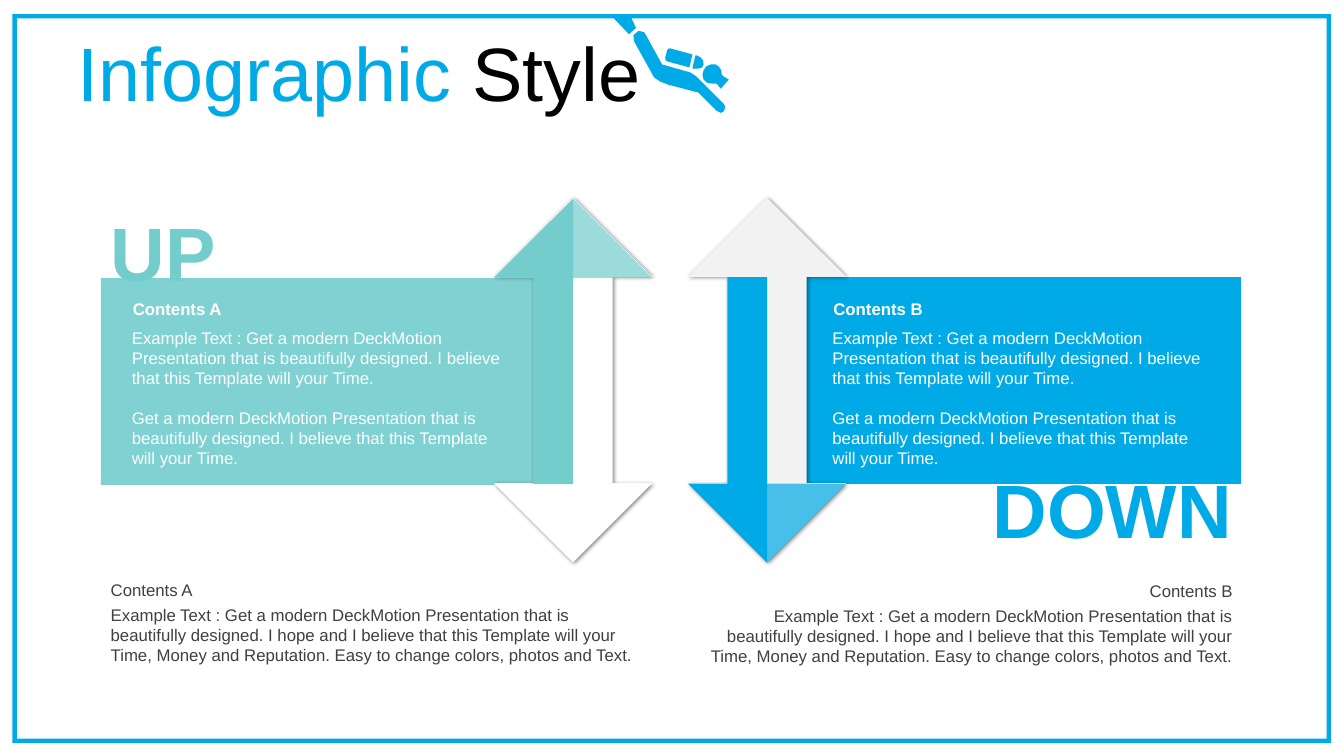
from lxml.etree import SubElement
from pptx import Presentation
from pptx.dml.color import RGBColor
from pptx.enum.shapes import MSO_SHAPE
from pptx.enum.text import MSO_ANCHOR, MSO_AUTO_SIZE, PP_ALIGN
from pptx.oxml.ns import qn
from pptx.util import Pt

BLUE, TEAL, WHITE, PALE, GREY, BLACK = "00AAE6", "73CDCD", "FFFFFF", "F2F2F2", "404040", "000000"
HEAD_HALF, STEM_HALF, HEAD_HEIGHT, FACE_HEIGHT = 56.6, 28.4, 56.6, 204

PANEL_COPY = [
    "Example Text : Get a modern DeckMotion Presentation that is beautifully designed. "
    "I believe that this Template will your Time.",
    "Get a modern DeckMotion Presentation that is beautifully designed. "
    "I believe that this Template will your Time.",
]
FOOTER_COPY = [
    "Example Text : Get a modern DeckMotion Presentation that is beautifully designed. "
    "I hope and I believe that this Template will your Time, Money and Reputation. "
    "Easy to change colors, photos and Text."
]

DIVER_HEAD = [(507.6, 46.1), (511, 46), (513.4, 47.5), (515.2, 50), (515.5, 53.3), (517, 54.7),
              (520.6, 56.9), (514.8, 63.4), (511.9, 59.8), (509.8, 59.8), (505.4, 59.4),
              (502.6, 56.9), (501.8, 53.5), (502.6, 50.4), (504.4, 47.5)]
DIVER_VALVE = [(497.5, 39.6), (500.4, 41), (502.2, 43.2), (502.6, 46.1), (501.5, 48.2),
               (499, 49), (494.6, 49), (495.4, 45.4), (496.8, 39.6)]
DIVER_TANK = [(478.8, 34.6), (494.6, 38.9), (492.5, 48.2), (476.6, 43.9), (475.3, 42.8),
              (475.2, 41), (476.6, 36), (477.4, 34.8)]
DIVER_BODY = [(457.2, 22.3), (460.1, 23), (461.5, 25.2), (465.8, 33.1), (473, 46.1),
              (493.2, 51.8), (497.5, 54.7), (517, 74.2), (518, 76), (517.7, 77.8),
              (516.8, 79.8), (514.8, 80.6), (511.9, 79.2), (499, 66.2), (477.4, 60.5),
              (471.6, 58.3), (467.3, 55.4), (452.9, 29.5), (452.5, 25.2), (455.8, 22.3)]
DIVER_FIN = [(436.3, 10.8), (450, 10.8), (454.3, 20), (449.3, 24.5)]
DIVER = [DIVER_HEAD, DIVER_VALVE, DIVER_TANK, DIVER_BODY, DIVER_FIN]


def color(hex_code):
    """Turn a hex string into a colour."""
    return RGBColor.from_string(hex_code)


def paint(shape, hex_code, opacity=100):
    """Fill a shape plainly, without line or shadow."""
    shape.shadow.inherit = False
    shape.line.fill.background()
    shape.fill.solid()
    shape.fill.fore_color.rgb = color(hex_code)
    if opacity < 100:
        tint = shape.fill._xPr.find(".//" + qn("a:srgbClr"))
        SubElement(tint, qn("a:alpha"), val=str(opacity * 1000))


def add_block(slide, preset, box, hex_code, opacity=100):
    """Add a painted preset shape."""
    block = slide.shapes.add_shape(preset, *map(Pt, box))
    paint(block, hex_code, opacity)
    return block


def add_outline(slide, contours, hex_code, opacity=100):
    """Add one painted outline made of closed contours."""
    placed = [[(Pt(x), Pt(y)) for x, y in contour] for contour in contours]
    builder = slide.shapes.build_freeform(*placed[0][0], scale=1.0)
    builder.add_line_segments(placed[0][1:], close=True)
    for contour in placed[1:]:
        builder.move_to(*contour[0])
        builder.add_line_segments(contour[1:], close=True)
    paint(builder.convert_to_shape(), hex_code, opacity)


def cast_shadow(shape):
    """Give a shape a soft shadow to the lower right."""
    effects = shape._element.spPr.find(qn("a:effectLst"))
    shadow = SubElement(effects, qn("a:outerShdw"), blurRad=str(Pt(3)), dist=str(Pt(1)),
                        dir="2700000", algn="tl", rotWithShape="0")
    shade = SubElement(shadow, qn("a:srgbClr"), val=BLACK)
    SubElement(shade, qn("a:alpha"), val="47000")


def style_run(run, size, hex_code, bold=False):
    """Set the font of a run."""
    run.font.name = "Arial"
    run.font.size = Pt(size)
    run.font.bold = bold
    run.font.color.rgb = color(hex_code)


def add_copy(slide, box, paragraphs, hex_code, size=12, bold=False,
             align=PP_ALIGN.LEFT, anchor=MSO_ANCHOR.TOP):
    """Add wrapped text with a line of space between paragraphs."""
    frame = slide.shapes.add_textbox(*map(Pt, box)).text_frame
    frame.word_wrap = True
    frame.auto_size = MSO_AUTO_SIZE.SHAPE_TO_FIT_TEXT
    frame.vertical_anchor = anchor
    frame.text = "\n".join(paragraphs)
    for index, paragraph in enumerate(frame.paragraphs):
        paragraph.alignment = align
        paragraph.space_before = Pt(14 if index else 0)
        for run in paragraph.runs:
            style_run(run, size, hex_code, bold)


def add_title(slide):
    """Add the two-coloured title."""
    frame = slide.shapes.add_textbox(Pt(48.2), Pt(26.6), Pt(881.3), Pt(56.9)).text_frame
    frame.word_wrap = True
    frame.vertical_anchor = MSO_ANCHOR.MIDDLE
    heading = frame.paragraphs[0]
    heading.line_spacing = 0.9
    heading.space_before = Pt(10)
    for words, hex_code in (("Infographic", BLUE), (" Style", BLACK)):
        run = heading.add_run()
        run.text = words
        style_run(run, 54, hex_code)


def add_folded_arrow(slide, center, tip, direction, base_color, face_color):
    """Add a double arrow with a coloured half pointing along direction."""
    base = add_block(slide, MSO_SHAPE.UP_DOWN_ARROW,
                     (center - HEAD_HALF, 141.1, 2 * HEAD_HALF, 260.6), base_color)
    cast_shadow(base)
    neck = tip - direction * HEAD_HEIGHT
    end = tip - direction * FACE_HEIGHT
    stem = center - STEM_HALF
    add_outline(slide, [[(center, tip), (center, end), (stem, end), (stem, neck),
                         (center - HEAD_HALF, neck)]], face_color)
    add_outline(slide, [[(center, tip), (center + HEAD_HALF, neck), (center, neck)]],
                face_color, 70)


def main():
    """Build the slide and save it."""
    deck = Presentation()
    deck.slide_width, deck.slide_height = Pt(960), Pt(540)
    slide = deck.slides.add_slide(deck.slide_layouts[6])

    border = add_block(slide, MSO_SHAPE.FRAME, (8.9, 10.1, 941.8, 520.6), BLUE)
    border.adjustments[0] = 0.006
    add_title(slide)
    add_outline(slide, DIVER, BLUE)

    add_block(slide, MSO_SHAPE.RECTANGLE, (72, 198.7, 311.8, 147.6), TEAL, 90)
    add_block(slide, MSO_SHAPE.RECTANGLE, (574.6, 198, 311.8, 147.6), BLUE)
    add_copy(slide, (72, 143.3, 118.8, 72.7), ["UP"], TEAL, 54, True,
             anchor=MSO_ANCHOR.MIDDLE)
    add_copy(slide, (688.3, 326.9, 198.7, 72.7), ["DOWN"], BLUE, 54, True,
             PP_ALIGN.RIGHT, MSO_ANCHOR.MIDDLE)
    add_folded_arrow(slide, 409.3, 141.8, -1, WHITE, TEAL)
    add_folded_arrow(slide, 547.9, 402, 1, PALE, BLUE)

    sides = (("Contents A", 87.1, 283.7, 72, 410.4, PP_ALIGN.LEFT),
             ("Contents B", 587.5, 286.6, 493.9, 411.1, PP_ALIGN.RIGHT))
    for label, panel_left, panel_width, footer_left, footer_top, align in sides:
        add_copy(slide, (panel_left + 0.7, 209.5, panel_width, 21.6), [label], WHITE, bold=True)
        add_copy(slide, (panel_left, 230.4, panel_width, 108.7), PANEL_COPY, WHITE)
        add_copy(slide, (footer_left, footer_top + 18, 393.8, 51.1), FOOTER_COPY, GREY,
                 align=align)
        add_copy(slide, (footer_left, footer_top, 393.8, 21.6), [label], GREY, align=align)

    deck.save("out.pptx")


if __name__ == "__main__":
    main()
